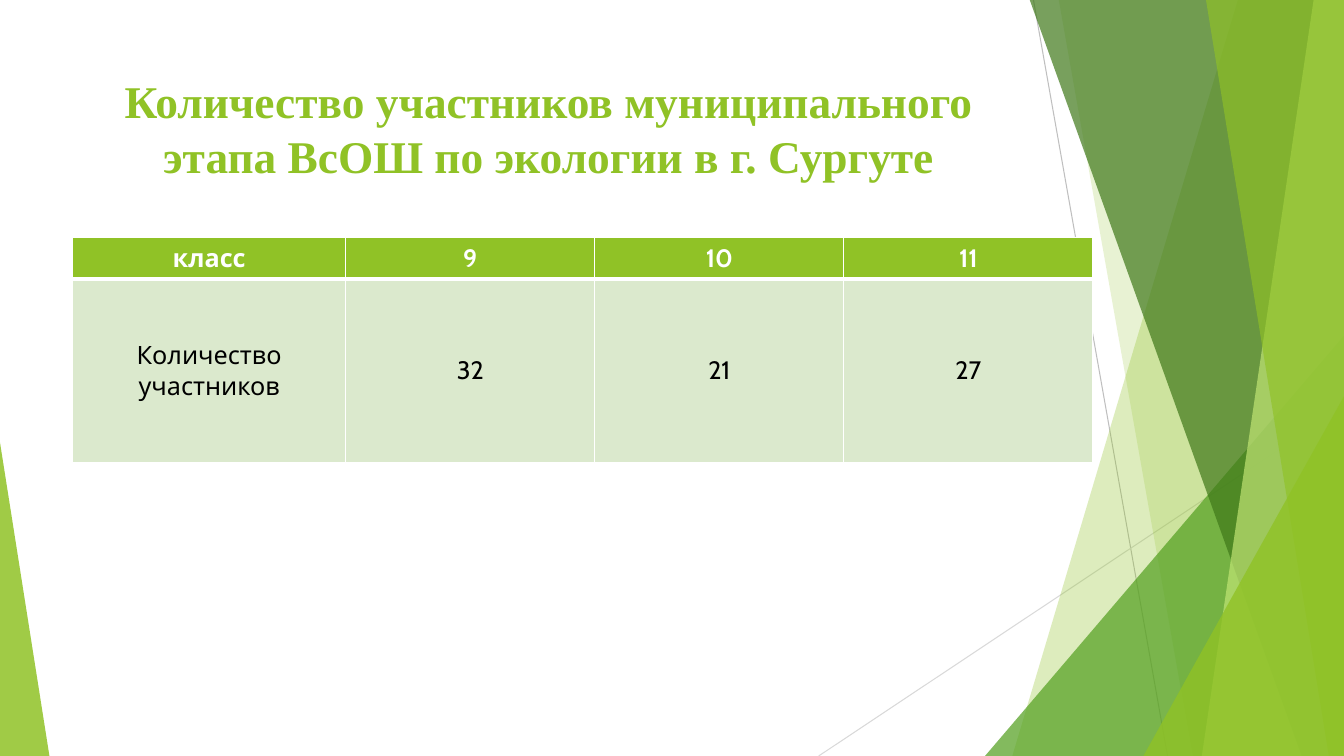
from lxml import etree
from pptx import Presentation
from pptx.dml.color import RGBColor
from pptx.enum import shapes, text
from pptx.oxml import ns
from pptx.util import Inches, Pt

TITLE = "Количество участников муниципального этапа ВсОШ по экологии в г. Сургуте"
ROWS = [
    ["класс", "9", "10", "11"],
    ["Количество участников", "32", "21", "27"],
]
COLUMN_WIDTHS = [2.71, 2.47, 2.47, 2.47]
ROW_HEIGHTS = [0.41, 1.82]

WIDTH, HEIGHT, TOP = 13.33, 7.5, -0.01
WHITE = RGBColor(0xFF, 0xFF, 0xFF)
BLACK = RGBColor(0, 0, 0)
LIME = RGBColor(0x90, 0xC2, 0x26)
GREEN = RGBColor(0x54, 0xA0, 0x21)
DARK_GREEN = RGBColor(0x3F, 0x78, 0x19)
PALE_LIME = RGBColor(0xC0, 0xE4, 0x74)
PALE_GREEN = RGBColor(0xDB, 0xE9, 0xCD)
GREY = RGBColor(0xBF, 0xBF, 0xBF)
LIGHT_GREY = RGBColor(0xD9, 0xD9, 0xD9)

# start x, start y, end x, end y, colour
RAYS = [
    (10.25, 0, 11.58, HEIGHT, GREY),
    (WIDTH, 4.03, 8.12, HEIGHT, LIGHT_GREY),
]
# Bands reach the right edge: top-left x, bottom-left x, colour, opacity %
# Triangles stand on the bottom edge: left, top, width, apex, colour, opacity %
FACETS = [
    ("band", 12.28, 10.04, LIME, 30),
    ("band", 10.5, 11.83, LIME, 20),
    ("triangle", 9.77, 3.33, 3.56, 1, GREEN, 72),
    ("band", 10.21, 12.91, DARK_GREEN, 70),
    ("band", 13.03, 11.92, PALE_LIME, 70),
    ("band", 11.96, 13.18, LIME, 65),
    ("triangle", 11.34, 3.93, 1.99, 1, LIME, 80),
    ("triangle", 0, 4.39, 0.49, 0, LIME, 85),
]


def paint(shape, color, opacity):
    shape.shadow.inherit = False
    shape.line.fill.background()
    shape.fill.solid()
    shape.fill.fore_color.rgb = color
    color_node = shape._element.spPr.find(".//" + ns.qn("a:srgbClr"))
    etree.SubElement(color_node, ns.qn("a:alpha"), val=str(opacity * 1000))


def add_ray(page, x1, y1, x2, y2, color):
    ray = page.shapes.add_connector(
        shapes.MSO_CONNECTOR.STRAIGHT, *map(Inches, (x1, y1, x2, y2)))
    ray.line.color.rgb = color
    ray.line.width = Pt(0.75)
    etree.SubElement(ray._element.spPr, ns.qn("a:effectLst"))


def add_band(page, top_x, bottom_x, color, opacity):
    corners = [(top_x, TOP), (WIDTH, TOP), (WIDTH, HEIGHT), (bottom_x, HEIGHT)]
    points = [(Inches(x), Inches(y)) for x, y in corners]
    builder = page.shapes.build_freeform(*points[0])
    builder.add_line_segments(points[1:], close=True)
    paint(builder.convert_to_shape(), color, opacity)


def add_triangle(page, left, top, width, apex, color, opacity):
    triangle = page.shapes.add_shape(
        shapes.MSO_SHAPE.ISOSCELES_TRIANGLE,
        *map(Inches, (left, top, width, HEIGHT - top)))
    triangle.adjustments[0] = apex
    paint(triangle, color, opacity)


def add_title(page):
    box = page.shapes.add_textbox(*map(Inches, (0.74, 0.67, 9.4, 1.44)))
    box.text_frame.word_wrap = True
    para = box.text_frame.paragraphs[0]
    para.text = TITLE
    para.alignment = text.PP_ALIGN.CENTER
    para.line_spacing = Pt(39.3)
    para.font.name = "Times New Roman"
    para.font.size = Pt(32.4)
    para.font.bold = True
    para.font.color.rgb = LIME


def add_borders(cell, bottom_width):
    properties = cell._tc.get_or_add_tcPr()
    widths = {"lnL": 1, "lnR": 1, "lnT": 1, "lnB": bottom_width}
    for index, (side, width) in enumerate(widths.items()):
        border = etree.Element(ns.qn("a:" + side), w=str(Pt(width)))
        fill = etree.SubElement(border, ns.qn("a:solidFill"))
        etree.SubElement(fill, ns.qn("a:srgbClr"), val=str(WHITE))
        properties.insert(index, border)


def add_counts(page):
    frame = page.shapes.add_table(
        len(ROWS), len(COLUMN_WIDTHS), Inches(0.72), Inches(2.36),
        Inches(sum(COLUMN_WIDTHS)), Inches(sum(ROW_HEIGHTS)))
    table = frame.table
    for column, width in zip(table.columns, COLUMN_WIDTHS):
        column.width = Inches(width)
    for r, (values, height) in enumerate(zip(ROWS, ROW_HEIGHTS)):
        header = r == 0
        table.rows[r].height = Inches(height)
        for c, value in enumerate(values):
            cell = table.cell(r, c)
            cell.text = value
            cell.fill.solid()
            cell.fill.fore_color.rgb = LIME if header else PALE_GREEN
            if not header:
                cell.vertical_anchor = text.MSO_ANCHOR.MIDDLE
            para = cell.text_frame.paragraphs[0]
            para.alignment = text.PP_ALIGN.CENTER
            para.font.name = "Cabin"
            para.font.size = Pt(18)
            para.font.bold = header
            para.font.color.rgb = WHITE if header else BLACK
            add_borders(cell, 3 if header else 1)


def main():
    deck = Presentation()
    deck.slide_width, deck.slide_height = Inches(WIDTH), Inches(HEIGHT)
    page = deck.slides.add_slide(deck.slide_layouts[6])
    for ray in RAYS:
        add_ray(page, *ray)
    draw = {"band": add_band, "triangle": add_triangle}
    for kind, *facet in FACETS:
        draw[kind](page, *facet)
    add_title(page)
    add_counts(page)
    deck.save("out.pptx")


if __name__ == "__main__":
    main()
